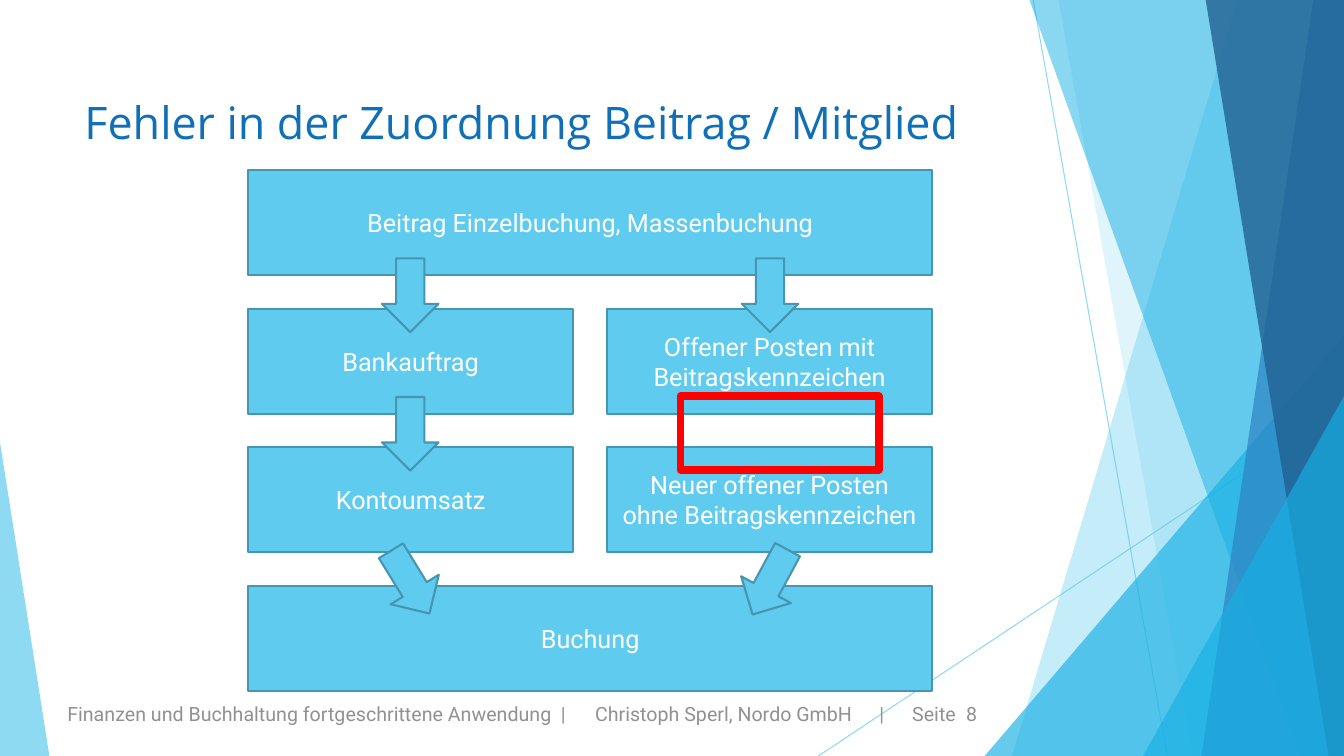
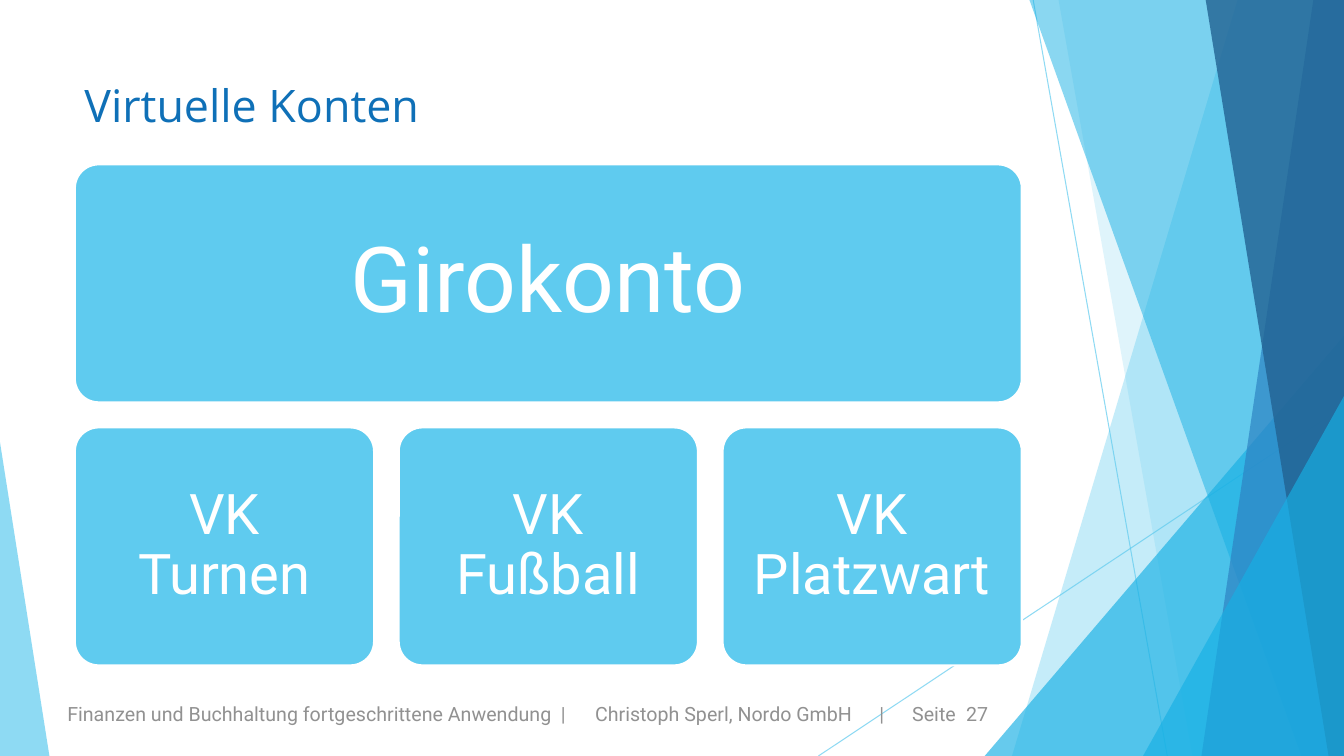
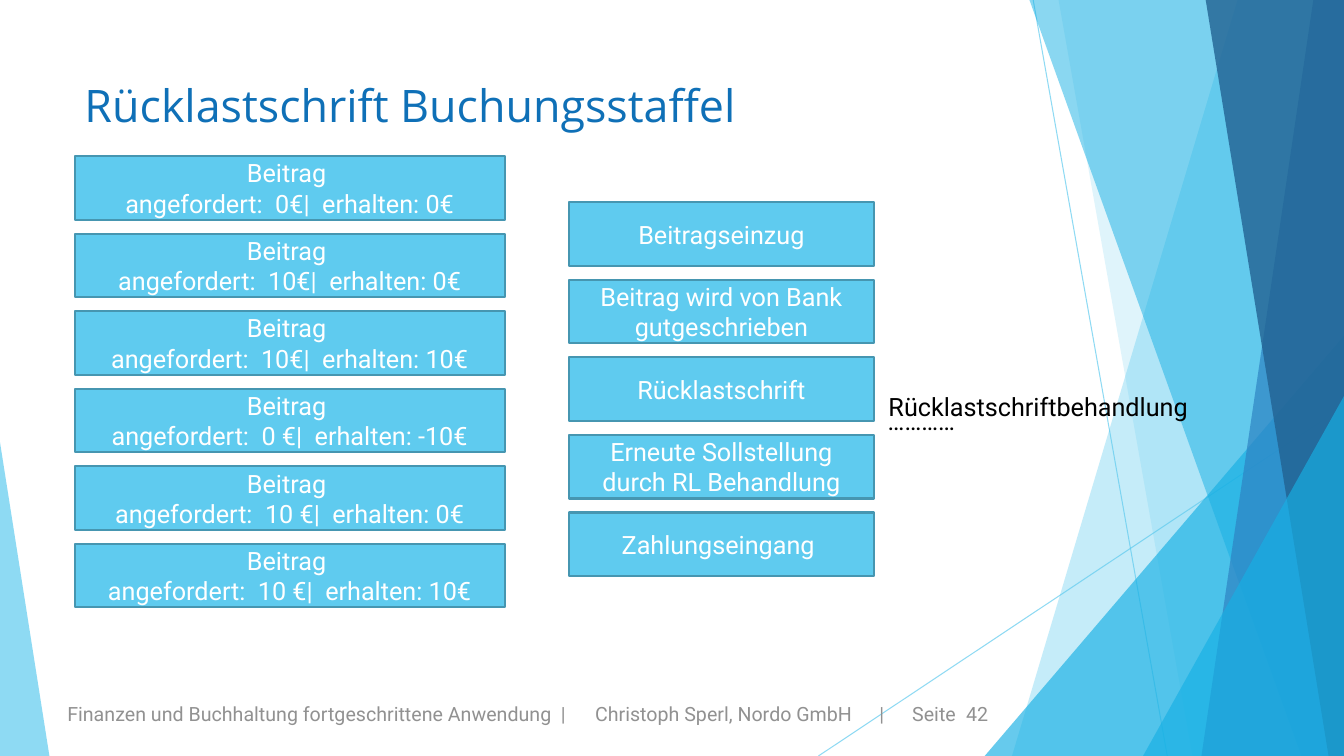
"""Three slides on bookkeeping: a posting flow, virtual accounts and a returned debit."""
from lxml.etree import SubElement
from pptx import Presentation
from pptx.dml.color import RGBColor
from pptx.enum.shapes import MSO_CONNECTOR, MSO_SHAPE
from pptx.enum.text import MSO_ANCHOR, PP_ALIGN
from pptx.oxml.ns import qn
from pptx.util import Pt

SKY = RGBColor(0x5F, 0xCB, 0xEF)
CYAN = RGBColor(0x17, 0xB0, 0xE4)
BLUE = RGBColor(0x2E, 0x83, 0xC3)
NAVY = RGBColor(0x22, 0x62, 0x92)
EDGE = RGBColor(0x46, 0x96, 0xB1)
HEAD = RGBColor(0x0F, 0x70, 0xB7)
GREY = RGBColor(0x91, 0x91, 0x91)
RED = RGBColor(0xFF, 0x00, 0x00)
WHITE = RGBColor(0xFF, 0xFF, 0xFF)
BLACK = RGBColor(0x00, 0x00, 0x00)
WIDE, HIGH = 960, 540


def write(frame, text, size, color, font="Roboto", align=PP_ALIGN.LEFT, tabs=()):
    """Fill a text frame with one paragraph."""
    frame.word_wrap = True
    para = frame.paragraphs[0]
    para.text = text
    para.alignment = align
    if tabs:
        stops = SubElement(para._p.get_or_add_pPr(), qn("a:tabLst"))
        for stop in tabs:
            SubElement(stops, qn("a:tab"), pos=str(Pt(stop)), algn="l")
    para.font.name = font
    para.font.size = Pt(size)
    para.font.color.rgb = color


def block(page, kind, area, text="", size=18, edge=EDGE):
    """Add a sky blue shape with centred white text."""
    shape = page.shapes.add_shape(kind, *map(Pt, area))
    shape.shadow.inherit = False
    shape.fill.solid()
    shape.fill.fore_color.rgb = SKY
    shape.line.color.rgb = edge
    shape.line.width = Pt(1.5)
    if text:
        shape.text_frame.vertical_anchor = MSO_ANCHOR.MIDDLE
        write(shape.text_frame, text, size, WHITE, align=PP_ALIGN.CENTER)
    return shape


deck = Presentation()
deck.slide_width, deck.slide_height = Pt(WIDE), Pt(HIGH)
blank = deck.slide_layouts[6]
for holder in list(blank.placeholders):
    holder._element.getparent().remove(holder._element)

heads = [
    ("Fehler in der Zuordnung Beitrag / Mitglied", 64, 8),
    ("Virtuelle Konten", 52, 27),
    ("Rücklastschrift Buchungsstaffel", 52, 42),
]
pages = [deck.slides.add_slide(blank) for head in heads]
flow, bank, debit = pages

decor = []
for ends in [(738, 0, 833.8, HIGH), (WIDE, 290.2, 584.6, HIGH)]:
    line = flow.shapes.add_connector(MSO_CONNECTOR.STRAIGHT, *map(Pt, ends))
    line.line.color.rgb = SKY
    line.line.width = Pt(0.75)
    SubElement(line._element.spPr, qn("a:effectLst"))
    decor.append((line, 70))

bands = [
    (SKY, 36, (884.2, 722.9)),
    (SKY, 20, (756, 851.8)),
    (CYAN, 66, (703.4, 239.8, 256.6, 300.2, 1)),
    (CYAN, 50, (735.1, 929.5)),
    (BLUE, 70, (938.2, 858.2)),
    (NAVY, 80, (861.1, 949)),
    (CYAN, 66, (816.5, 283, 143.5, 257, 1)),
    (SKY, 70, (0, 316, 35.3, 224, 0)),
]
for color, alpha, geo in bands:
    if len(geo) == 2:
        upper, lower = geo
        pen = flow.shapes.build_freeform(Pt(upper), Pt(-0.7))
        rest = [(WIDE, -0.7), (WIDE, HIGH), (lower, HIGH)]
        pen.add_line_segments([(Pt(x), Pt(y)) for x, y in rest])
        band = pen.convert_to_shape()
    else:
        band = flow.shapes.add_shape(MSO_SHAPE.ISOSCELES_TRIANGLE, *map(Pt, geo[:4]))
        band.adjustments[0] = geo[4]
    band.shadow.inherit = False
    band.fill.solid()
    band.fill.fore_color.rgb = color
    band.line.fill.background()
    decor.append((band, alpha))

for shape, alpha in decor:
    for node in shape._element.iter(qn("a:srgbClr")):
        SubElement(node, qn("a:alpha"), val=str(alpha * 1000))
    blank.shapes._spTree.append(shape._element)

for page, (title, top, number) in zip(pages, heads):
    foot = page.shapes.add_textbox(Pt(41), Pt(498.2), Pt(746), Pt(24.5))
    note = ("Finanzen und Buchhaltung fortgeschrittene Anwendung\t|"
            f"\tChristoph Sperl, Nordo GmbH\t|\tSeite\t{number}")
    write(foot.text_frame, note, 14, GREY, tabs=(352.5, 377, 580, 603.5, 642))
    head = page.shapes.add_textbox(Pt(53.3), Pt(top), Pt(676.8), Pt(54))
    write(head.text_frame, title, 32, HEAD, "Open Sans")

left, right, full, half = 177.1, 433.5, 488.9, 232.5
steps = [
    (0, left, full, "Beitrag Einzelbuchung, Massenbuchung"),
    (1, left, half, "Bankauftrag"),
    (1, right, half, "Offener Posten mit Beitragskennzeichen"),
    (2, left, half, "Kontoumsatz"),
    (2, right, half, "Neuer offener Posten\nohne Beitragskennzeichen"),
    (3, left, full, "Buchung"),
]
for row, x, width, text in steps:
    block(flow, MSO_SHAPE.RECTANGLE, (x, 121.5 + 99 * row, width, 75), text)
arrows = [
    (529.9, 184.6, 0),
    (272.9, 184.6, 0),
    (272.9, 283.6, 0),
    (272.9, 389.5, 328.5),
    (529.9, 389.5, 28.3),
]
for x, y, turn in arrows:
    arrow = block(flow, MSO_SHAPE.DOWN_ARROW, (x, y, 40.3, 52.6))
    arrow.rotation = turn
mark = block(flow, MSO_SHAPE.RECTANGLE, (486, 283, 141.8, 52.6), edge=RED)
mark.fill.background()
mark.line.width = Pt(5.5)

side, span, gap, tall = 53.5, 676.4, 17.6, 170
rows = [
    (117.4, 65, 19, ["Girokonto"]),
    (305.3, 40, 12, ["VK Turnen", "VK Fußball", "VK Platzwart"]),
]
for y, size, inset, names in rows:
    width = (span + gap) / len(names) - gap
    for i, name in enumerate(names):
        area = (side + i * (width + gap), y, width, tall)
        card = block(bank, MSO_SHAPE.ROUNDED_RECTANGLE, area, name, size, WHITE)
        card.adjustments[0] = 0.1
        frame = card.text_frame
        frame.margin_left = frame.margin_right = Pt(inset)
        frame.margin_top = frame.margin_bottom = Pt(inset)
        frame.paragraphs[0].line_spacing = 0.9

sums = [("0€", "0€"), ("10€", "0€"), ("10€", "10€"),
        ("0 €", "-10€"), ("10 €", "0€"), ("10 €", "10€")]
dues = [f"Beitrag \nangefordert:  {due}|  erhalten: {paid}" for due, paid in sums]
acts = [
    "Beitragseinzug",
    "Beitrag wird von Bank gutgeschrieben",
    "Rücklastschrift",
    "Erneute Sollstellung durch RL Behandlung",
    "Zahlungseingang ",
]
for x, y, width, texts in [(53.3, 111.5, 307.4, dues), (406.3, 144.5, 218, acts)]:
    for i, text in enumerate(texts):
        block(debit, MSO_SHAPE.RECTANGLE, (x, y + 55.4 * i, width, 45.4), text)

dots = debit.shapes.add_textbox(Pt(627), Pt(285.8), Pt(206.6), Pt(28.8))
write(dots.text_frame, "…………", 18, BLACK)
care = debit.shapes.add_textbox(Pt(621.4), Pt(267.4), Pt(240.5), Pt(45.4))
care.text_frame.vertical_anchor = MSO_ANCHOR.MIDDLE
write(care.text_frame, "Rücklastschriftbehandlung", 18, BLACK, align=PP_ALIGN.CENTER)

deck.save("out.pptx")
